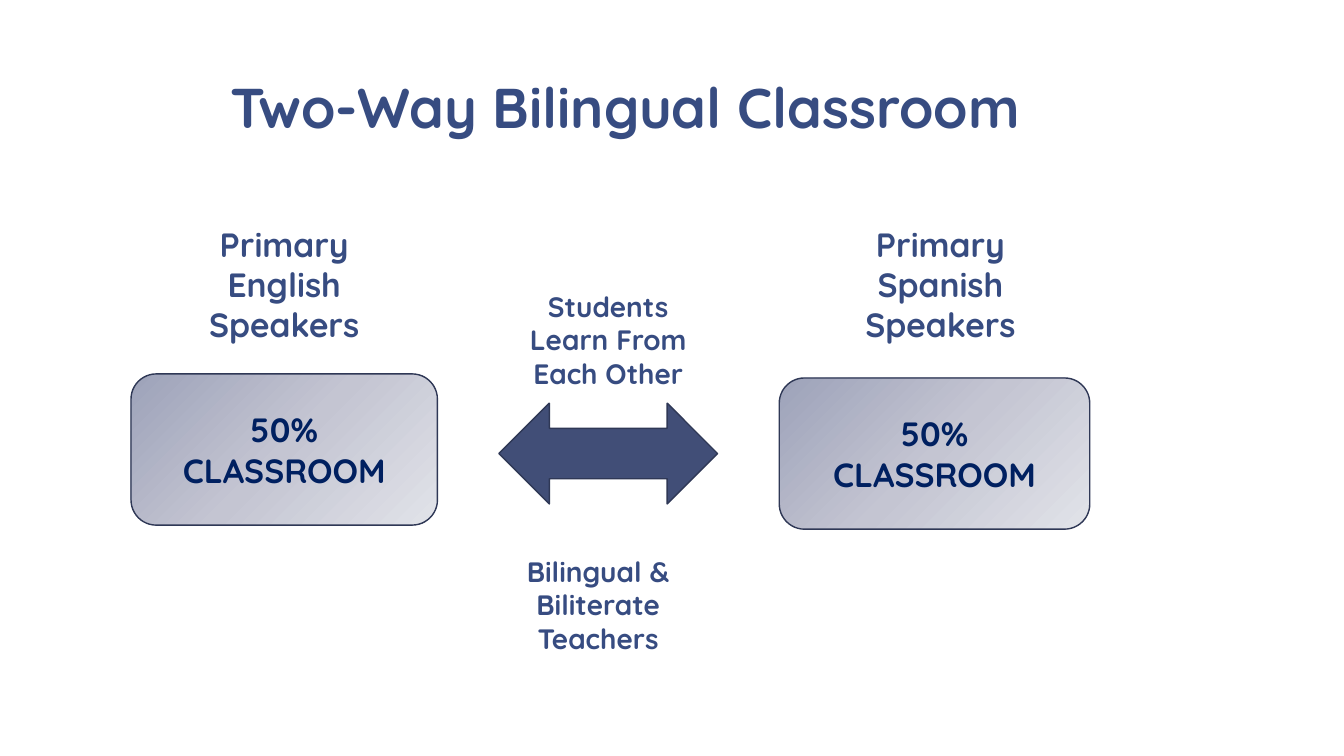
from copy import deepcopy
from dataclasses import dataclass

from pptx import Presentation
from pptx.dml.color import RGBColor as Color
from pptx.enum.shapes import MSO_SHAPE as Preset
from pptx.enum.text import MSO_ANCHOR as Anchor, PP_ALIGN as Align
from pptx.util import Pt


@dataclass(frozen=True)
class Theme:
    font: str = "Quicksand"
    heading: str = "374C81"
    card_text: str = "002060"
    outline: str = "2F3856"
    arrow: str = "414E77"
    card_stops: tuple = ((0, "9DA2B9"), (0.5, "C4C5D2"), (1, "E1E3E9"))
    title_size: int = 40
    label_size: int = 24
    note_size: int = 20


class PageBuilder:
    def __init__(self, page, theme):
        self.page = page
        self.theme = theme

    def set_text(self, shape, text, size, color):
        frame = shape.text_frame
        frame.word_wrap = True
        frame.text = text
        for para in frame.paragraphs:
            para.alignment = Align.CENTER
            for span in para.runs:
                span.font.name = self.theme.font
                span.font.size = Pt(size)
                span.font.bold = True
                span.font.color.rgb = Color.from_string(color)

    def label(self, text, area, size):
        box = self.page.shapes.add_textbox(*map(Pt, area))
        self.set_text(box, text, size, self.theme.heading)

    def outlined(self, preset, area):
        shape = self.page.shapes.add_shape(preset, *map(Pt, area))
        shape.shadow.inherit = False
        shape.line.color.rgb = Color.from_string(self.theme.outline)
        shape.line.width = Pt(1)
        return shape

    def card(self, text, area):
        card = self.outlined(Preset.ROUNDED_RECTANGLE, area)
        card.fill.gradient()
        card.fill.gradient_angle = 315
        first = card._element.spPr.find(".//{*}gs")
        first.addnext(deepcopy(first))
        for stop, (position, color) in zip(card.fill.gradient_stops, self.theme.card_stops):
            stop.position = position
            stop.color.rgb = Color.from_string(color)
        card.text_frame.vertical_anchor = Anchor.MIDDLE
        self.set_text(card, text, self.theme.label_size, self.theme.card_text)

    def arrow(self, area):
        arrow = self.outlined(Preset.LEFT_RIGHT_ARROW, area)
        arrow.fill.solid()
        arrow.fill.fore_color.rgb = Color.from_string(self.theme.arrow)


def main():
    deck = Presentation()
    deck.slide_width, deck.slide_height = Pt(960), Pt(540)
    theme = Theme()
    builder = PageBuilder(deck.slides.add_slide(deck.slide_layouts[6]), theme)

    builder.label("Two-Way Bilingual Classroom", (155.5, 48.2, 581.8, 55.4), theme.title_size)

    groups = (
        ("Primary\nEnglish\nSpeakers", (93.6, 156.2, 218.9, 94.3), (93.6, 267.1, 218.9, 108)),
        ("Primary Spanish\nSpeakers", (581.8, 156.2, 180, 123.8), (556.6, 270, 221.8, 108)),
    )
    for speakers, label_area, card_area in groups:
        builder.card("50%\nCLASSROOM", card_area)
        builder.label(speakers, label_area, theme.label_size)

    builder.arrow((356.4, 288, 156.2, 72))
    builder.label("Students Learn From Each Other", (356.4, 203, 156.2, 79.9), theme.note_size)
    builder.label("Bilingual & Biliterate Teachers", (342, 392.4, 170.6, 79.9), theme.note_size)

    deck.save("out.pptx")


if __name__ == "__main__":
    main()
